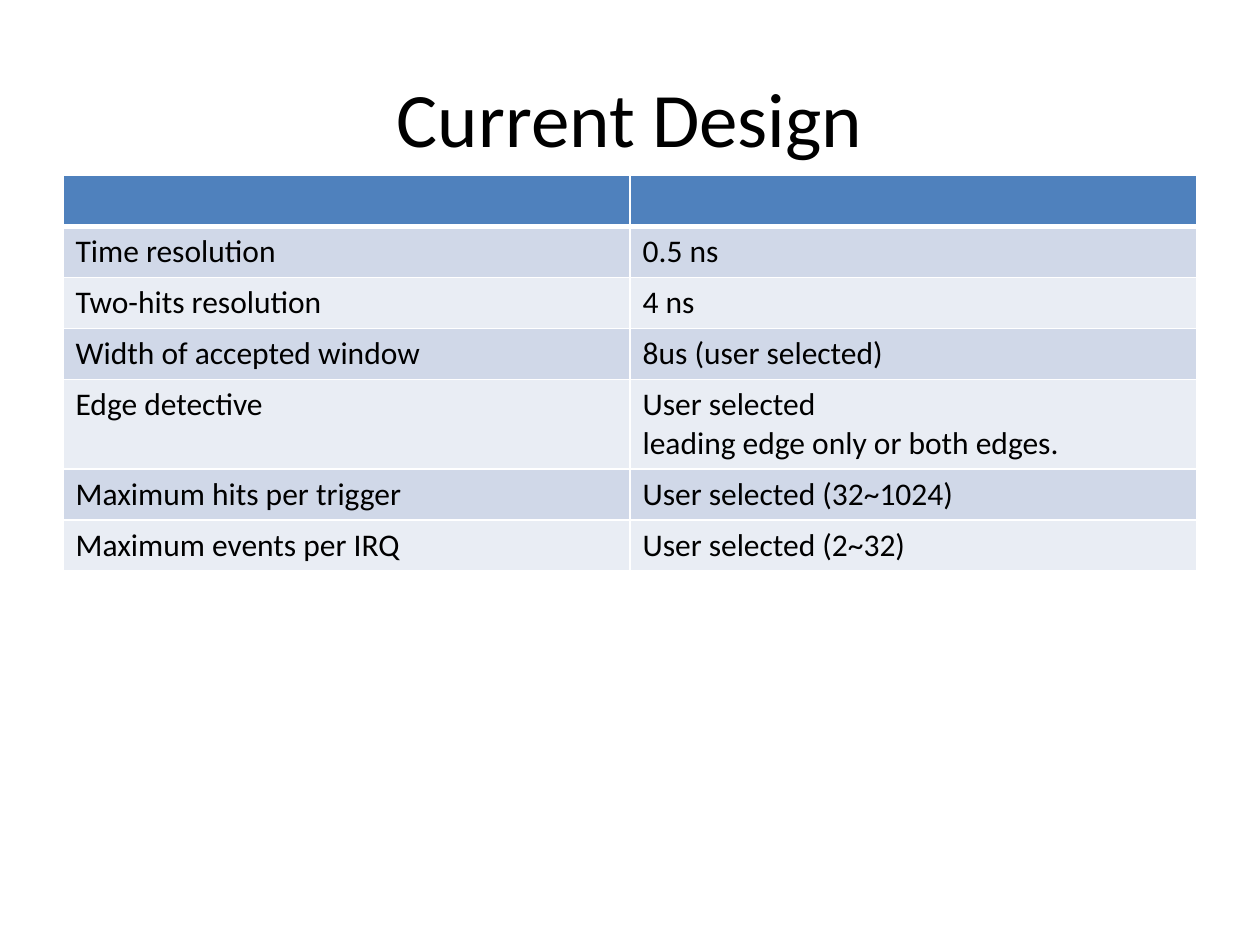
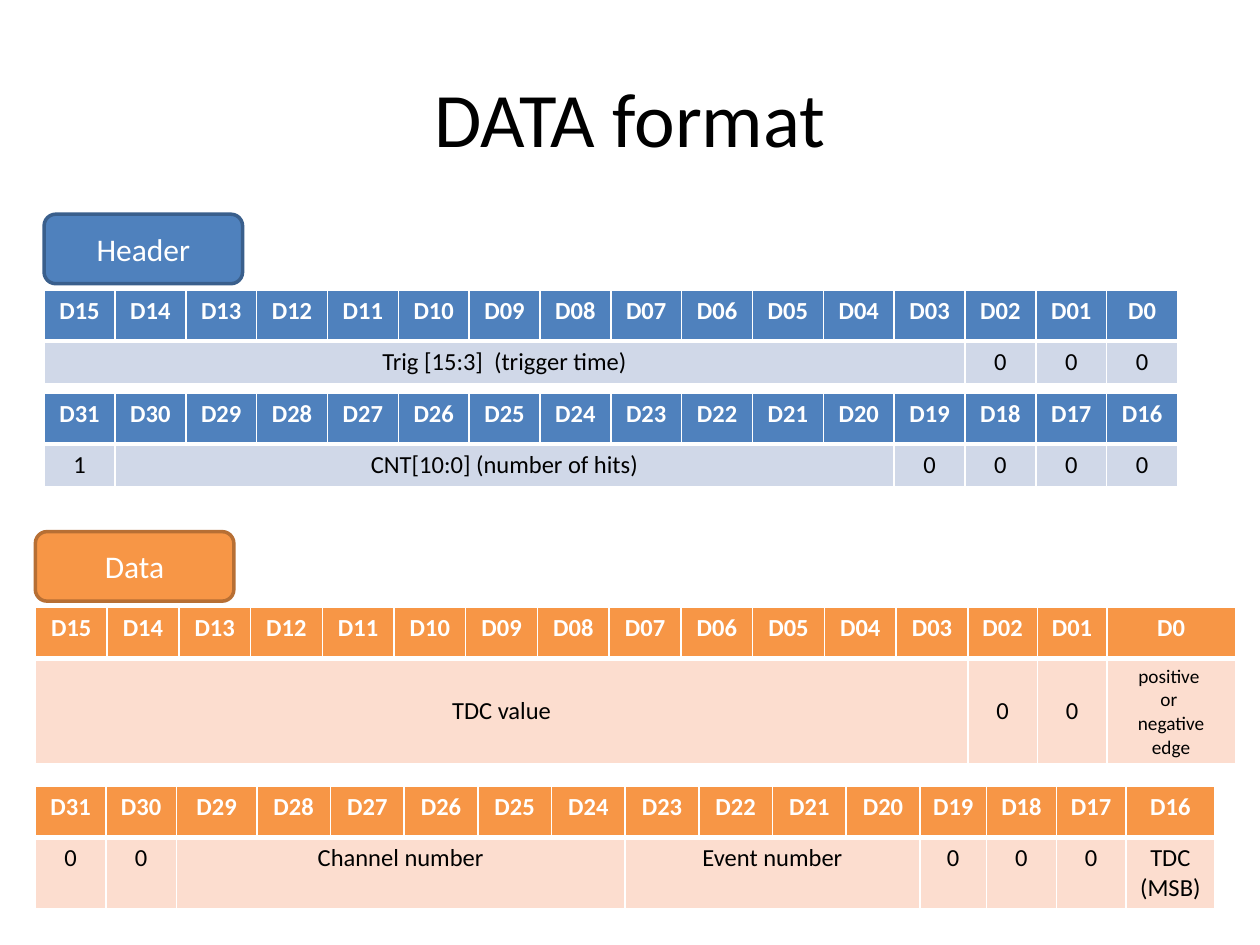
from lxml import etree
from pptx import Presentation
from pptx.dml.color import RGBColor
from pptx.enum.shapes import MSO_SHAPE
from pptx.enum.text import MSO_ANCHOR, PP_ALIGN
from pptx.oxml.ns import qn
from pptx.util import Pt

ROUNDED = MSO_SHAPE.ROUNDED_RECTANGLE
TOP, MIDDLE = MSO_ANCHOR.TOP, MSO_ANCHOR.MIDDLE
LEFT, CENTER = PP_ALIGN.LEFT, PP_ALIGN.CENTER

FONT = "Calibri"
COLORS = {
    "text": "000000", "white": "FFFFFF",
    "blue": "4F81BD", "blue_edge": "3A5F8C", "blue_band": "D0D8E8", "blue_pale": "E9EDF4",
    "orange": "F79646", "orange_edge": "B76F34", "orange_band": "FCDDCF",
}
HEAD_HEIGHT = 29.2
THIN, THICK = 1, 3

DESIGN_ROWS = [
    ("Time resolution", "0.5 ns"),
    ("Two-hits resolution", "4 ns"),
    ("Width of accepted window", "8us (user selected)"),
    ("Edge detective", "User selected\nleading edge only or both edges."),
    ("Maximum hits per trigger", "User selected (32~1024)"),
    ("Maximum events per IRQ", "User selected (2~32)"),
]

ZERO = ("0", 1)
EVEN_WIDTHS = [40.5] * 16
TDC_WIDTHS = [41] * 13 + [39.7] * 2 + [73.5]
COUNTER_WIDTHS = [40.3] * 2 + [46] + [42.1] * 9 + [38.2] + [39.8] * 2 + [50.8]

# Each word: top, column widths, highest bit, height of the field row, fields (text, bits)
WORD_GROUPS = [
    ("Header", "blue", 25.2, 122.4, [
        (165.6, EVEN_WIDTHS, 15, 24.3,
         [("Trig [15:3]  (trigger time)", 13)] + [ZERO] * 3),
        (224.6, EVEN_WIDTHS, 31, 24.3,
         [("1", 1), ("CNT[10:0] (number of hits)", 11)] + [ZERO] * 4),
    ]),
    ("Data", "orange", 20.2, 303.8, [
        (347, TDC_WIDTHS, 15, 60,
         [("TDC value", 13), ZERO, ZERO, ("positive \vor \vnegative edge", 1)]),
        (449.3, COUNTER_WIDTHS, 31, 40.6,
         [ZERO, ZERO, ("Channel number", 6), ("Event number", 4)]
         + [ZERO] * 3 + [("TDC (MSB)", 1)]),
    ]),
]


def rgb(name):
    return RGBColor.from_string(COLORS[name])


def write(frame, text, size, color="text", align=CENTER, bold=False):
    """Newlines start paragraphs, vertical tabs break lines inside one."""
    for index, content in enumerate(text.split("\n")):
        para = frame.add_paragraph() if index else frame.paragraphs[0]
        para.alignment = align
        for part, line in enumerate(content.split("\v")):
            if part:
                para.add_line_break()
            span = para.add_run()
            span.text = line
            span.font.name = FONT
            span.font.size = Pt(size)
            span.font.bold = bold
            span.font.color.rgb = rgb(color)


def add_title(page, text):
    box = page.shapes.add_textbox(Pt(36), Pt(21.6), Pt(648), Pt(90))
    box.text_frame.word_wrap = True
    box.text_frame.vertical_anchor = MIDDLE
    write(box.text_frame, text, 44)


def style_cell(cell, fill, top=THIN, bottom=THIN):
    """Fill the cell and draw its white borders."""
    cell.fill.solid()
    cell.fill.fore_color.rgb = rgb(fill)
    properties = cell._tc.get_or_add_tcPr()
    borders = (("a:lnL", THIN), ("a:lnR", THIN), ("a:lnT", top), ("a:lnB", bottom))
    for index, (tag, width) in enumerate(borders):
        line = etree.Element(qn(tag), w=str(Pt(width)))
        solid = etree.SubElement(line, qn("a:solidFill"))
        etree.SubElement(solid, qn("a:srgbClr"), val=COLORS["white"])
        properties.insert(index, line)


def add_grid(page, left, top, widths, heights, fills):
    """Add an empty table with one fill per row; the first row is the head."""
    frame = page.shapes.add_table(len(heights), len(widths), Pt(left), Pt(top),
                                  Pt(sum(widths)), Pt(sum(heights)))
    table = frame.table
    table.horz_banding = False
    for column, width in zip(table.columns, widths):
        column.width = Pt(width)
    for index, (row, height, fill) in enumerate(zip(table.rows, heights, fills)):
        row.height = Pt(height)
        for cell in row.cells:
            style_cell(cell, fill, THICK if index == 1 else THIN,
                       THICK if index == 0 else THIN)
    return table


def add_design_table(page, left, top, width):
    heights = [HEAD_HEIGHT] + [51.1 if "\n" in value else HEAD_HEIGHT
                               for _, value in DESIGN_ROWS]
    fills = ["blue"] + ["blue_band", "blue_pale"] * 3
    table = add_grid(page, left, top, [width / 2] * 2, heights, fills)
    for row, texts in enumerate(DESIGN_ROWS, 1):
        for column, text in enumerate(texts):
            write(table.cell(row, column).text_frame, text, 18, align=LEFT)


def add_word_table(page, color, left, top, widths, high_bit, field_height, fields):
    """Bit labels above the merged fields of one 16-bit word."""
    table = add_grid(page, left, top, widths, [HEAD_HEIGHT, field_height],
                     [color, color + "_band"])
    for column in range(len(widths)):
        bit = high_bit - column
        label = f"D{bit:02d}" if bit else "D0"
        write(table.cell(0, column).text_frame, label, 14, "white", bold=True)
    has_note = any("\v" in text for text, _ in fields)
    column = 0
    for text, bits in fields:
        cell = table.cell(1, column)
        if bits > 1:
            cell.merge(table.cell(1, column + bits - 1))
        cell.vertical_anchor = MIDDLE if has_note else TOP
        write(cell.text_frame, text, 11 if "\v" in text else 14)
        column += bits


def add_group_label(page, text, color, left, top):
    box = page.shapes.add_shape(ROUNDED, Pt(left), Pt(top), Pt(113.4), Pt(39.7))
    box.shadow.inherit = False
    box.fill.solid()
    box.fill.fore_color.rgb = rgb(color)
    box.line.color.rgb = rgb(color + "_edge")
    box.line.width = Pt(2)
    box.text_frame.vertical_anchor = MIDDLE
    write(box.text_frame, text, 18, "white")


def add_page(deck, title):
    page = deck.slides.add_slide(deck.slide_layouts[6])
    add_title(page, title)
    return page


def main():
    deck = Presentation()
    deck.slide_width, deck.slide_height = Pt(720), Pt(540)

    design_page = add_page(deck, "Current Design")
    add_design_table(design_page, 36, 100.1, 648)

    format_page = add_page(deck, "DATA format")
    for name, color, left, label_top, words in WORD_GROUPS:
        for word in words:
            add_word_table(format_page, color, left, *word)
        add_group_label(format_page, name, color, left, label_top)

    deck.save("out.pptx")


if __name__ == "__main__":
    main()
